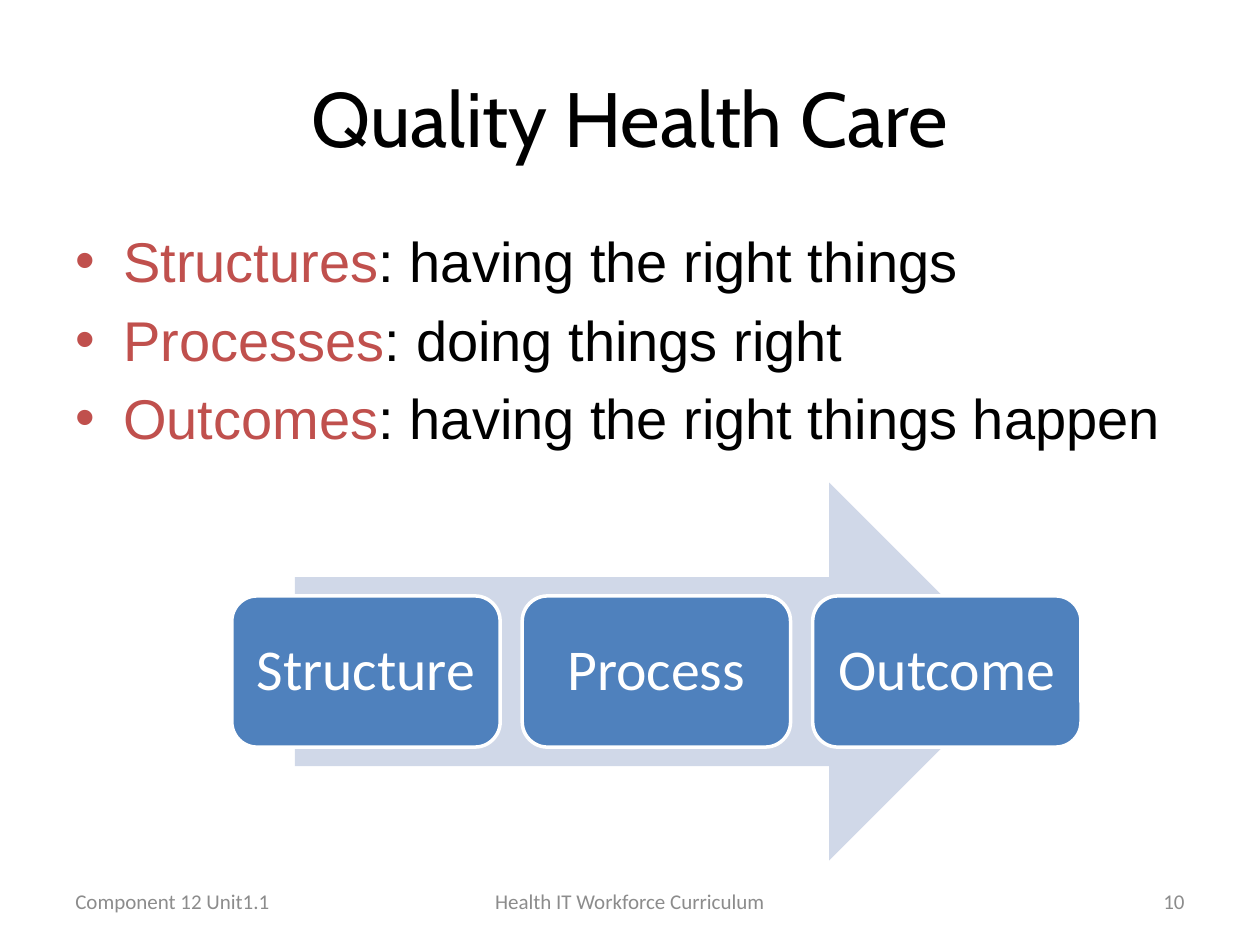
import pptx
import pptx.util
import pptx.oxml
import pptx.dml.color
import pptx.enum.shapes
import pptx.enum.text
from dataclasses import dataclass

Inches = pptx.util.Inches
Pt = pptx.util.Pt
Shape = pptx.enum.shapes.MSO_SHAPE
Align = pptx.enum.text.PP_ALIGN
Anchor = pptx.enum.text.MSO_ANCHOR


@dataclass(frozen=True)
class Theme:
    ink: str = "000000"
    key: str = "C0504D"
    arrow: str = "D0D8E8"
    step: str = "4F81BD"
    white: str = "FFFFFF"
    gray: str = "8C8C8C"
    head: str = "Cabin"
    body: str = "Arial"
    label: str = "Calibri"
    title_pt: int = 44
    body_pt: int = 32
    step_pt: int = 33
    foot_pt: int = 12


theme = Theme()


def rgb(code):
    return pptx.dml.color.RGBColor.from_string(code)


def style(run, face, size, color):
    run.font.name = face
    run.font.size = Pt(size)
    run.font.color.rgb = rgb(color)


def place(shape, box):
    shape.left, shape.top, shape.width, shape.height = map(Inches, box)


def write(frame, text, face, size, color, align):
    frame.text = text
    frame.word_wrap = True
    frame.vertical_anchor = Anchor.MIDDLE
    para = frame.paragraphs[0]
    para.alignment = align
    style(para.runs[0], face, size, color)


def bullet(para, indent):
    props = para._p.get_or_add_pPr()
    props.set("marL", str(Inches(indent)))
    props.set("indent", str(-Inches(indent)))
    space = "http://schemas.openxmlformats.org/drawingml/2006/main"
    for mark in (f'buFont xmlns:a="{space}" typeface="{theme.body}"',
                 f'buChar xmlns:a="{space}" char="•"'):
        props.append(pptx.oxml.parse_xml(f"<a:{mark}/>"))


def title(slide, box):
    shape = slide.shapes.title
    place(shape, box)
    write(shape.text_frame, "Quality Health Care", theme.head,
          theme.title_pt, theme.ink, Align.CENTER)


def points(slide, box, items):
    """Bulleted list with each leading term in the key colour."""
    frame = slide.shapes.add_textbox(*map(Inches, box)).text_frame
    frame.word_wrap = True
    for i, (term, rest) in enumerate(items):
        para = frame.add_paragraph() if i else frame.paragraphs[0]
        para.space_before = Pt(0.2 * theme.body_pt)
        for text, color in ((term, theme.key), (": " + rest, theme.ink)):
            run = para.add_run()
            run.text = text
            style(run, theme.body, theme.body_pt, color)
        bullet(para, 0.38)


def solid(group, kind, box, color):
    shape = group.shapes.add_shape(kind, *map(Inches, box))
    shape.shadow.inherit = False
    shape.fill.solid()
    shape.fill.fore_color.rgb = rgb(color)
    shape.line.fill.background()
    return shape


def flow(slide, box, names):
    """Equal steps across the box, over an arrow of its full height."""
    left, top, width, height = box
    group = slide.shapes.add_group_shape()
    inset = 0.5
    solid(group, Shape.RIGHT_ARROW,
          (left + inset, top, width - 2 * inset, height), theme.arrow)
    wide, tall = 2.13, 0.4 * height
    pitch = (width - wide) / (len(names) - 1)
    for i, name in enumerate(names):
        spot = (left + i * pitch, top + (height - tall) / 2, wide, tall)
        step = solid(group, Shape.ROUNDED_RECTANGLE, spot, theme.step)
        step.line.color.rgb = rgb(theme.white)
        step.line.width = Pt(2)
        frame = step.text_frame
        frame.margin_left = frame.margin_right = Inches(0.05)
        frame.margin_top = frame.margin_bottom = Inches(0.05)
        write(frame, name, theme.label, theme.step_pt, theme.white,
              Align.CENTER)
        frame.paragraphs[0].line_spacing = 0.9


def footer(slide, box):
    left, top, width, height = box
    side, mid = 2.33, 3.17
    parts = (
        ("Component 12 Unit1.1", left, side, Align.LEFT),
        ("Health IT Workforce Curriculum", left + (width - mid) / 2, mid,
         Align.CENTER),
        ("10", left + width - side, side, Align.RIGHT),
    )
    for text, x, wide, align in parts:
        shape = slide.shapes.add_textbox(
            *map(Inches, (x, top, wide, height)))
        write(shape.text_frame, text, theme.label, theme.foot_pt,
              theme.gray, align)


def main():
    deck = pptx.Presentation()
    deck.slide_width, deck.slide_height = Inches(10), Inches(7.5)
    slide = deck.slides.add_slide(deck.slide_layouts[5])
    title(slide, (0.5, 0.3, 9, 1.25))
    points(slide, (0.5, 1.75, 9, 4.95), (
        ("Structures", "having the right things"),
        ("Processes", "doing things right"),
        ("Outcomes", "having the right things happen"),
    ))
    flow(slide, (1.84, 3.83, 6.74, 3), ("Structure", "Process", "Outcome"))
    footer(slide, (0.5, 6.95, 9, 0.4))
    deck.save("out.pptx")


if __name__ == "__main__":
    main()
